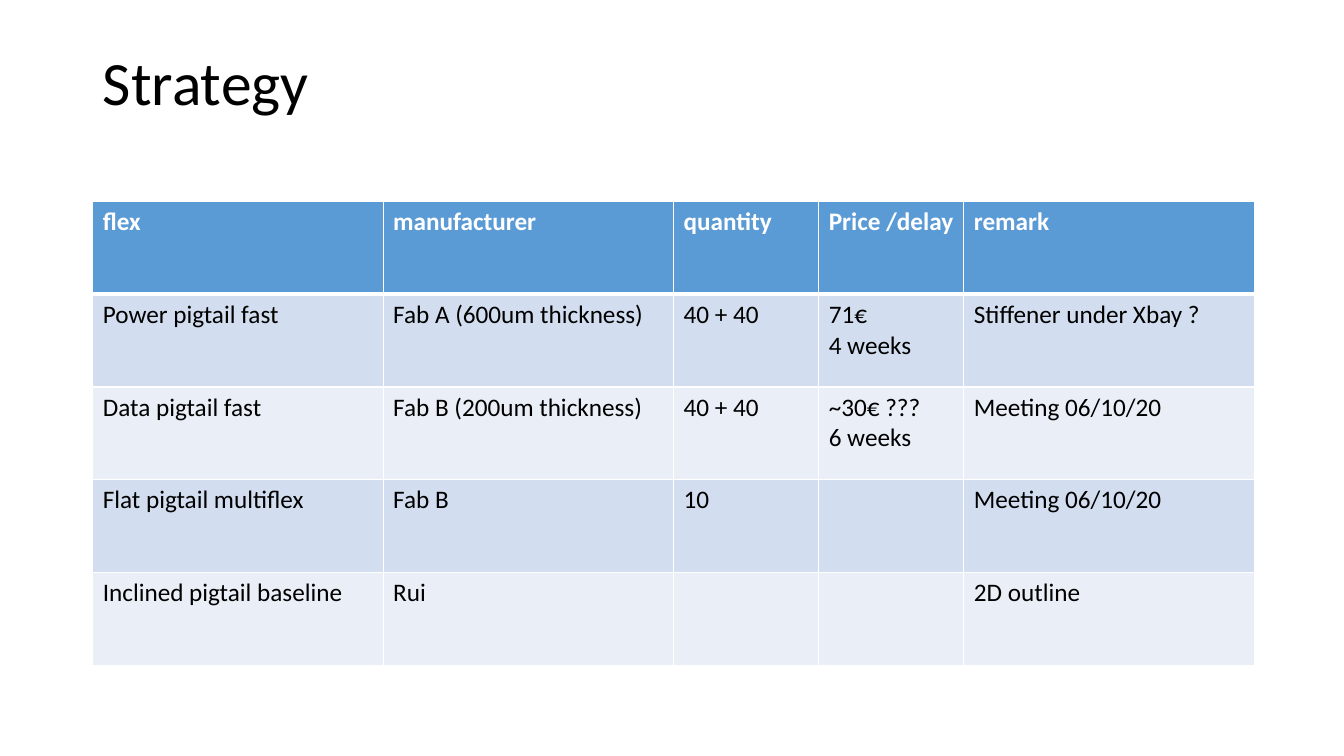
from dataclasses import dataclass

from lxml import etree
from pptx import Presentation
from pptx.dml.color import RGBColor
from pptx.enum.text import MSO_ANCHOR, MSO_AUTO_SIZE, PP_ALIGN
from pptx.oxml.ns import qn
from pptx.table import Table, _Cell
from pptx.text.text import TextFrame
from pptx.util import Inches, Pt

LEFT = PP_ALIGN.LEFT
MIDDLE = MSO_ANCHOR.MIDDLE
NO_AUTOFIT = MSO_AUTO_SIZE.NONE
TITLE_ONLY_LAYOUT = 5
FONT = "Calibri"
COLORS = {
    "text": "000000",
    "white": "FFFFFF",
    "header": "5B9BD5",
    "odd_row": "D2DEEF",
    "even_row": "EAEFF7",
}
MARGIN_LEFT = 0.92
COLUMN_WIDTHS = (2.88, 2.88, 1.44, 1.44, 2.88)
ROW_HEIGHT = 0.92
THIN_BORDER = 1
HEADER_BORDER = 3


@dataclass(frozen=True)
class FlexOrder:
    flex: str
    manufacturer: str
    quantity: str
    price_delay: str
    remark: str

    def cells(self) -> tuple[str, ...]:
        return (self.flex, self.manufacturer, self.quantity, self.price_delay, self.remark)


ROWS = (
    FlexOrder("flex", "manufacturer", "quantity", "Price /delay", "remark"),
    FlexOrder("Power pigtail fast", "Fab A (600um thickness)", "40 + 40",
              "71€\n4 weeks", "Stiffener under Xbay ?"),
    FlexOrder("Data pigtail fast", "Fab B (200um thickness)", "40 + 40",
              "~30€ ???\n6 weeks", "Meeting 06/10/20"),
    FlexOrder("Flat pigtail multiflex", "Fab B", "10", "", "Meeting 06/10/20"),
    FlexOrder("Inclined pigtail baseline", "Rui", "", "", "2D outline"),
)


def write_text(text_frame: TextFrame, text: str, *, size: float, color: str = "text",
               bold: bool = False, line_spacing: float = 1.0) -> None:
    text_frame.text = text
    for paragraph in text_frame.paragraphs:
        paragraph.alignment = LEFT
        paragraph.line_spacing = line_spacing
        paragraph.font.size = Pt(size)
        for run in paragraph.runs:
            run.font.name = FONT
            run.font.size = Pt(size)
            run.font.bold = bold
            run.font.color.rgb = RGBColor.from_string(COLORS[color])


def set_borders(cell: _Cell, top: float, bottom: float) -> None:
    properties = cell._tc.get_or_add_tcPr()
    widths = {"lnL": THIN_BORDER, "lnR": THIN_BORDER, "lnT": top, "lnB": bottom}
    for side, width in widths.items():
        line = etree.SubElement(properties, qn(f"a:{side}"), w=str(Pt(width)))
        fill = etree.SubElement(line, qn("a:solidFill"))
        etree.SubElement(fill, qn("a:srgbClr"), val=COLORS["white"])


def fill_row(table: Table, row_index: int, order: FlexOrder) -> None:
    is_header = row_index == 0
    fill_color = "header" if is_header else "odd_row" if row_index % 2 else "even_row"
    for column_index, text in enumerate(order.cells()):
        cell = table.cell(row_index, column_index)
        set_borders(cell,
                    top=HEADER_BORDER if row_index == 1 else THIN_BORDER,
                    bottom=HEADER_BORDER if is_header else THIN_BORDER)
        cell.fill.solid()
        cell.fill.fore_color.rgb = RGBColor.from_string(COLORS[fill_color])
        write_text(cell.text_frame, text, size=18, bold=is_header,
                   color="white" if is_header else "text")


def main() -> None:
    presentation = Presentation()
    presentation.slide_width = Inches(13.33)
    presentation.slide_height = Inches(7.5)
    slide = presentation.slides.add_slide(presentation.slide_layouts[TITLE_ONLY_LAYOUT])

    title = slide.shapes.title
    title.left, title.top = Inches(MARGIN_LEFT), Inches(0.4)
    title.width, title.height = Inches(11.5), Inches(0.89)
    title.text_frame.vertical_anchor = MIDDLE
    title.text_frame.auto_size = NO_AUTOFIT
    write_text(title.text_frame, "Strategy", size=44, line_spacing=0.9)

    table = slide.shapes.add_table(
        len(ROWS), len(COLUMN_WIDTHS), Inches(MARGIN_LEFT), Inches(2),
        Inches(sum(COLUMN_WIDTHS)), Inches(ROW_HEIGHT * len(ROWS))).table
    for column, width in zip(table.columns, COLUMN_WIDTHS):
        column.width = Inches(width)
    for row_index, order in enumerate(ROWS):
        table.rows[row_index].height = Inches(ROW_HEIGHT)
        fill_row(table, row_index, order)

    presentation.save("out.pptx")


if __name__ == "__main__":
    main()
